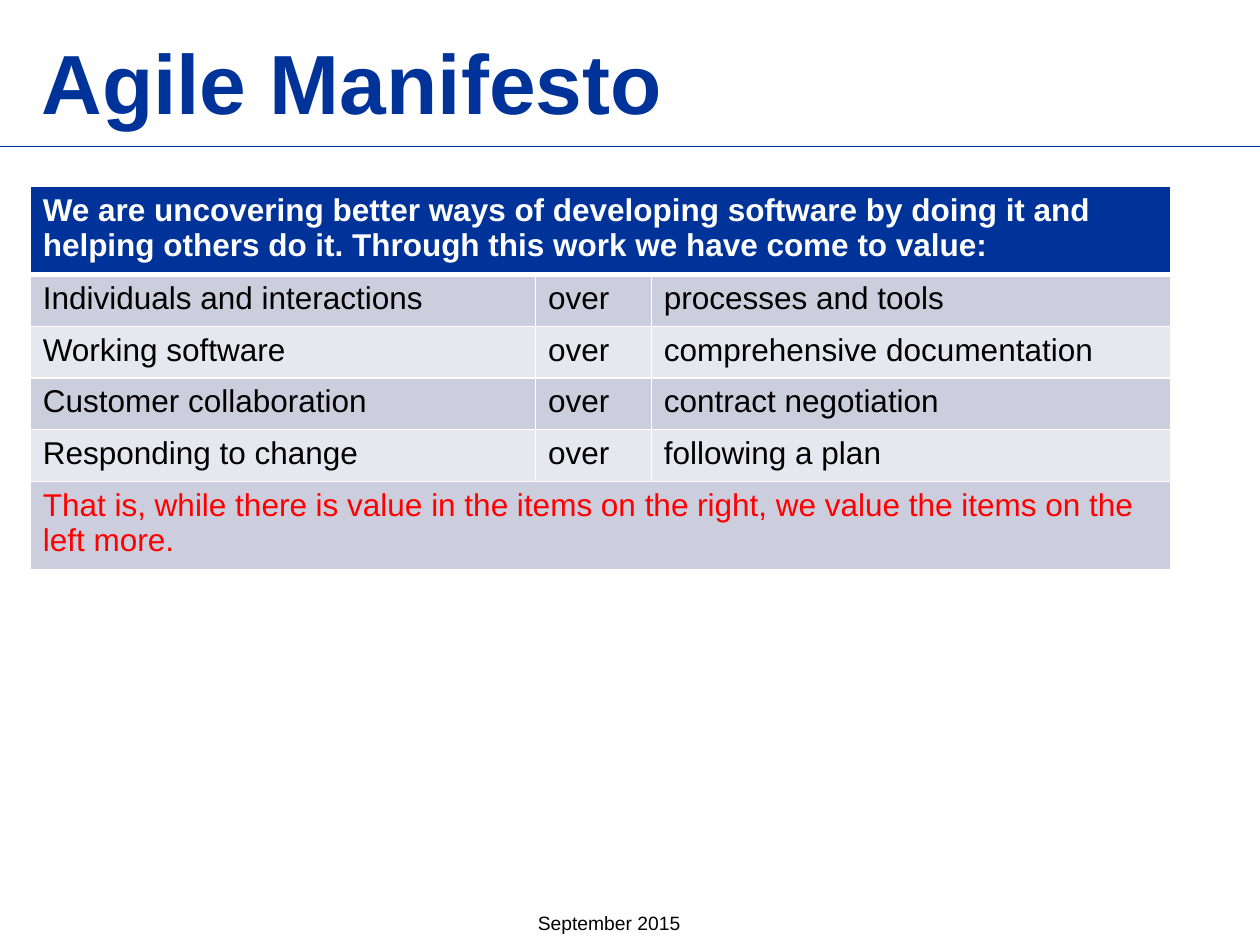
from dataclasses import dataclass

from lxml import etree
from pptx import Presentation
from pptx.dml.color import RGBColor
from pptx.enum.shapes import MSO_CONNECTOR
from pptx.enum.text import MSO_ANCHOR, MSO_AUTO_SIZE, PP_ALIGN
from pptx.oxml.ns import qn
from pptx.util import Inches, Pt

STRAIGHT = MSO_CONNECTOR.STRAIGHT
BOTTOM = MSO_ANCHOR.BOTTOM
LEFT = PP_ALIGN.LEFT
NO_AUTOFIT = MSO_AUTO_SIZE.NONE
FIT_SHAPE = MSO_AUTO_SIZE.SHAPE_TO_FIT_TEXT
TITLE_ONLY = 5


@dataclass(frozen=True)
class Theme:
    font: str = "Arial"
    blue: str = "003399"
    white: str = "FFFFFF"
    black: str = "000000"
    red: str = "FF0000"
    bands: tuple = ("CCCEDE", "E7E8EF")
    title_size: int = 48
    table_size: int = 18
    footer_size: int = 11
    rule_width: float = 0.5
    border_width: int = 1
    header_border_width: int = 3


THEME = Theme()
SLIDE_WIDTH, SLIDE_HEIGHT = 10, 7.5
RULE_TOP = 1.16

# Boxes are left, top, width, height in inches
TITLE_BOX = (0.23, 0.15, 8.28, 0.94)
TABLE_BOX = (0.24, 1.48, 9.05, 2.94)
FOOTER_BOX = (4.17, 7.18, 1.34, 0.29)

COLUMN_WIDTHS = (4.01, 0.92, 4.12)
ONE_LINE_ROW, TWO_LINE_ROW = 0.41, 0.65

INTRODUCTION = (
    "We are uncovering better ways of developing software by doing it and "
    "helping others do it. Through this work we have come to value:"
)
VALUES = (
    ("Individuals and interactions", "processes and tools"),
    ("Working software", "comprehensive documentation"),
    ("Customer collaboration", "contract negotiation"),
    ("Responding to change", "following a plan"),
)
CONCLUSION = (
    "That is, while there is value in the items on the right, "
    "we value the items on the left more."
)


def write_text(text_frame, text, *, size, color, bold=False):
    paragraph = text_frame.paragraphs[0]
    paragraph.alignment = LEFT
    run = paragraph.add_run()
    run.text = text
    run.font.name = THEME.font
    run.font.size = Pt(size)
    run.font.bold = bold
    run.font.color.rgb = RGBColor.from_string(color)


def add_title(slide, box):
    title = slide.shapes.title
    title.left, title.top, title.width, title.height = map(Inches, box)
    text_frame = title.text_frame
    text_frame.word_wrap = True
    text_frame.auto_size = NO_AUTOFIT
    text_frame.vertical_anchor = BOTTOM
    write_text(text_frame, "Agile Manifesto", size=THEME.title_size,
               color=THEME.blue, bold=True)


def add_rule(slide, top):
    rule = slide.shapes.add_connector(
        STRAIGHT, 0, Inches(top), Inches(SLIDE_WIDTH), Inches(top))
    rule.line.color.rgb = RGBColor.from_string(THEME.blue)
    rule.line.width = Pt(THEME.rule_width)
    etree.SubElement(rule._element.spPr, qn("a:effectLst"))


def add_footer(slide, box):
    footer = slide.shapes.add_textbox(*map(Inches, box))
    text_frame = footer.text_frame
    text_frame.word_wrap = False
    text_frame.auto_size = FIT_SHAPE
    write_text(text_frame, "September 2015", size=THEME.footer_size,
               color=THEME.black)


def set_borders(cell, **widths):
    properties = cell._tc.get_or_add_tcPr()
    for side in "LRTB":
        width = widths.get(side, THEME.border_width)
        line = etree.SubElement(properties, qn(f"a:ln{side}"), w=str(Pt(width)))
        fill = etree.SubElement(line, qn("a:solidFill"))
        etree.SubElement(fill, qn("a:srgbClr"), val=THEME.white)


def add_values_table(slide, box):
    rows = [(INTRODUCTION, "", "")]
    rows += [(left, "over", right) for left, right in VALUES]
    rows += [(CONCLUSION, "", "")]
    last = len(rows) - 1

    table = slide.shapes.add_table(
        len(rows), len(COLUMN_WIDTHS), *map(Inches, box)).table
    for column, width in zip(table.columns, COLUMN_WIDTHS):
        column.width = Inches(width)

    for row_index, texts in enumerate(rows):
        is_header = row_index == 0
        spans_table = row_index in (0, last)
        height = TWO_LINE_ROW if spans_table else ONE_LINE_ROW
        table.rows[row_index].height = Inches(height)

        # Header, alternating bands and the closing remark
        band = THEME.blue if is_header else THEME.bands[(row_index - 1) % 2]
        color = {0: THEME.white, last: THEME.red}.get(row_index, THEME.black)
        borders = {0: {"B": THEME.header_border_width},
                   1: {"T": THEME.header_border_width}}.get(row_index, {})

        for column_index, text in enumerate(texts):
            cell = table.cell(row_index, column_index)
            set_borders(cell, **borders)
            cell.fill.solid()
            cell.fill.fore_color.rgb = RGBColor.from_string(band)
            if text:
                write_text(cell.text_frame, text, size=THEME.table_size,
                           color=color, bold=is_header)
        if spans_table:
            table.cell(row_index, 0).merge(
                table.cell(row_index, len(COLUMN_WIDTHS) - 1))


def main():
    presentation = Presentation()
    presentation.slide_width = Inches(SLIDE_WIDTH)
    presentation.slide_height = Inches(SLIDE_HEIGHT)
    slide = presentation.slides.add_slide(presentation.slide_layouts[TITLE_ONLY])
    add_rule(slide, RULE_TOP)
    add_footer(slide, FOOTER_BOX)
    add_title(slide, TITLE_BOX)
    add_values_table(slide, TABLE_BOX)
    presentation.save("out.pptx")


if __name__ == "__main__":
    main()
